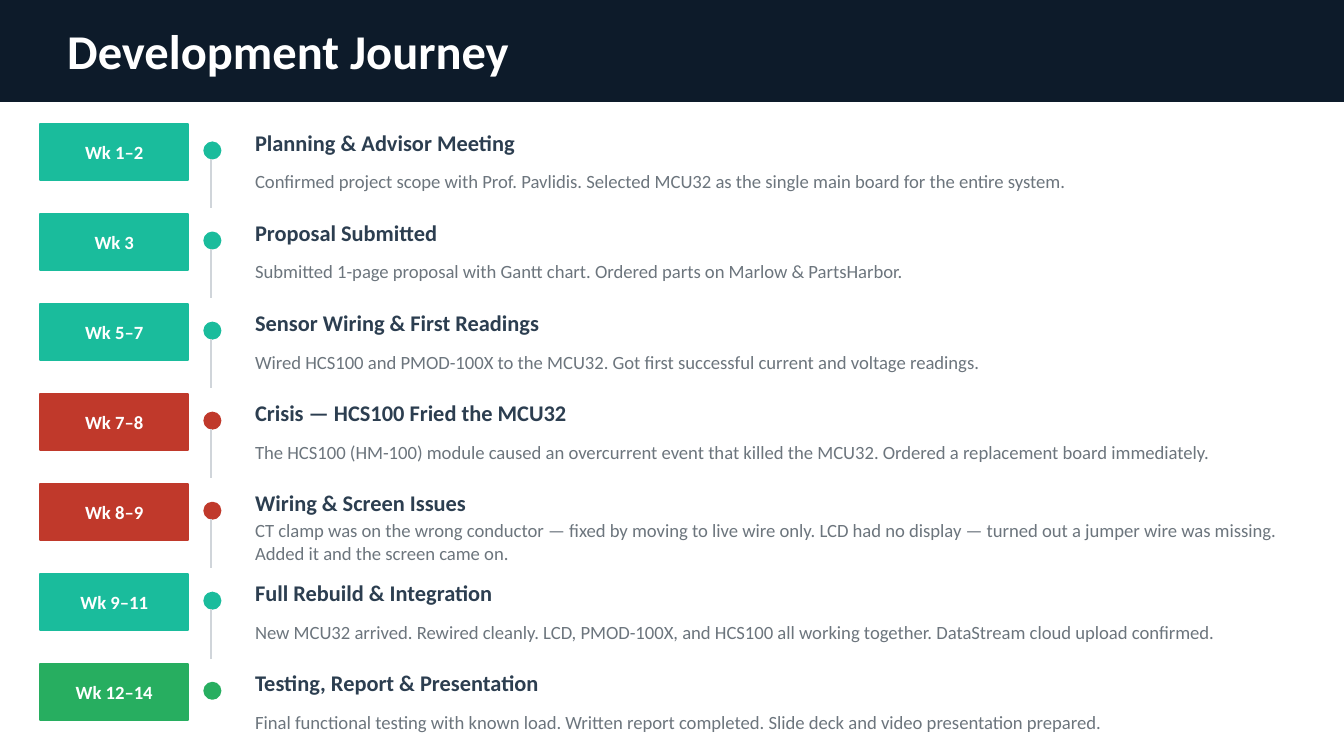
from lxml import etree
from pptx import Presentation
from pptx.dml.color import RGBColor
from pptx.enum import shapes, text
from pptx.oxml import ns
from pptx.util import Inches, Pt

# Content: week, colour, heading, detail
TITLE = "Development Journey"
TEAL, RED, GREEN = "1ABC9C", "C0392B", "27AE60"
NAVY, WHITE, SLATE, GREY, RULE = "0D1B2A", "FFFFFF", "2C3E50", "6C757D", "D0D5DA"
STAGES = [
    ("Wk 1–2", TEAL, "Planning & Advisor Meeting",
     "Confirmed project scope with Prof. Pavlidis. Selected MCU32 as the single "
     "main board for the entire system."),
    ("Wk 3", TEAL, "Proposal Submitted",
     "Submitted 1-page proposal with Gantt chart. Ordered parts on Marlow & PartsHarbor."),
    ("Wk 5–7", TEAL, "Sensor Wiring & First Readings",
     "Wired HCS100 and PMOD-100X to the MCU32. Got first successful current and "
     "voltage readings."),
    ("Wk 7–8", RED, "Crisis — HCS100 Fried the MCU32",
     "The HCS100 (HM-100) module caused an overcurrent event that killed the MCU32. "
     "Ordered a replacement board immediately."),
    ("Wk 8–9", RED, "Wiring & Screen Issues",
     "CT clamp was on the wrong conductor — fixed by moving to live wire only. "
     "LCD had no display — turned out a jumper wire was missing. "
     "Added it and the screen came on."),
    ("Wk 9–11", TEAL, "Full Rebuild & Integration",
     "New MCU32 arrived. Rewired cleanly. LCD, PMOD-100X, and HCS100 all working "
     "together. DataStream cloud upload confirmed."),
    ("Wk 12–14", GREEN, "Testing, Report & Presentation",
     "Final functional testing with known load. Written report completed. "
     "Slide deck and video presentation prepared."),
]

# Text formats
TITLE_FONT = {"size": Pt(26), "bold": True, "color": WHITE}
WEEK_FONT = {"size": Pt(10), "bold": True, "color": WHITE}
HEADING_FONT = {"size": Pt(12), "bold": True, "color": SLATE}
DETAIL_FONT = {"size": Pt(10), "bold": False, "color": GREY}

# Layout in inches
TOP, PITCH = 0.92, 0.67
BADGE_LEFT, BADGE_WIDTH = 0.3, 1.1
TEXT_LEFT, TEXT_WIDTH, TEXT_HEIGHT = 1.8, 7.9, 0.28


def rgb(value):
    return RGBColor.from_string(value)


def write(box, words, style, align=text.PP_ALIGN.LEFT):
    frame = box.text_frame
    frame.text = words
    settings = {"word_wrap": True, "auto_size": text.MSO_AUTO_SIZE.NONE,
                "vertical_anchor": text.MSO_ANCHOR.MIDDLE}
    for name, value in settings.items():
        setattr(frame, name, value)
    para = frame.paragraphs[0]
    para.alignment = align
    font = para.runs[0].font
    for name, value in {"name": "Calibri", **style}.items():
        if name == "color":
            font.color.rgb = rgb(value)
        else:
            setattr(font, name, value)


def add_solid(page, kind, area, color):
    shape = page.shapes.add_shape(kind, *map(Inches, area))
    shape.shadow.inherit = False
    shape.fill.solid()
    shape.fill.fore_color.rgb = rgb(color)
    shape.line.color.rgb = rgb(color)
    shape.line.width = Pt(1)
    return shape


def add_text(page, area, words, style, align=text.PP_ALIGN.LEFT):
    write(page.shapes.add_textbox(*map(Inches, area)), words, style, align)


def add_stem(page, x, top, bottom):
    stem = page.shapes.add_connector(
        shapes.MSO_CONNECTOR.STRAIGHT, *map(Inches, (x, top, x, bottom)))
    stem.line.color.rgb = rgb(RULE)
    stem.line.width = Pt(1.5)
    etree.SubElement(stem.element.spPr, ns.qn("a:effectLst"))


def add_header(page):
    title = page.shapes.title
    bar = add_solid(page, shapes.MSO_SHAPE.RECTANGLE, (0, 0, 10, 0.75), NAVY)
    title.element.addprevious(bar.element)  # bar goes behind the title
    title.left, title.top, title.width, title.height = map(Inches, (0.4, 0.1, 9.2, 0.55))
    write(title, TITLE, TITLE_FONT)


def add_stage(page, index, week, color, heading, detail):
    top = TOP + index * PITCH
    # Week badge
    add_solid(page, shapes.MSO_SHAPE.RECTANGLE, (BADGE_LEFT, top, BADGE_WIDTH, 0.42), color)
    add_text(page, (BADGE_LEFT, top + 0.02, BADGE_WIDTH, 0.38), week, WEEK_FONT,
             text.PP_ALIGN.CENTER)
    # Timeline dot, with a stem towards the next stage
    add_solid(page, shapes.MSO_SHAPE.OVAL, (1.52, top + 0.14, 0.12, 0.12), color)
    if index < len(STAGES) - 1:
        add_stem(page, 1.57, top + 0.26, top + 0.63)
    # Heading and detail
    for offset, words, style in ((0, heading, HEADING_FONT), (0.29, detail, DETAIL_FONT)):
        add_text(page, (TEXT_LEFT, top + offset, TEXT_WIDTH, TEXT_HEIGHT), words, style)


def main():
    deck = Presentation()
    deck.slide_width = Inches(10)
    deck.slide_height = deck.slide_width * 9 // 16
    page = deck.slides.add_slide(deck.slide_layouts.get_by_name("Title Only"))
    page.background.fill.solid()
    page.background.fill.fore_color.rgb = rgb(WHITE)
    add_header(page)
    for index, stage in enumerate(STAGES):
        add_stage(page, index, *stage)
    deck.save("out.pptx")


if __name__ == "__main__":
    main()
